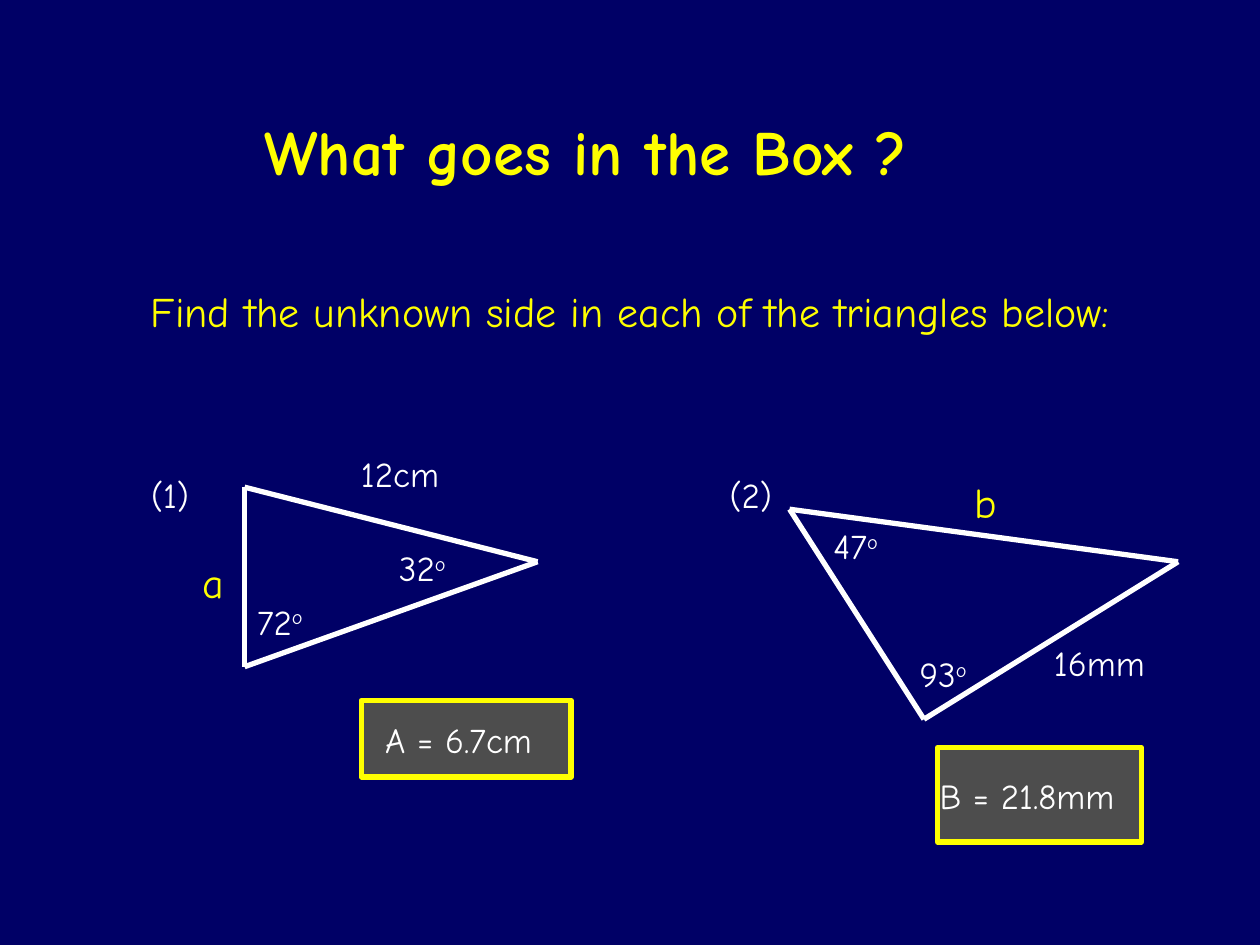
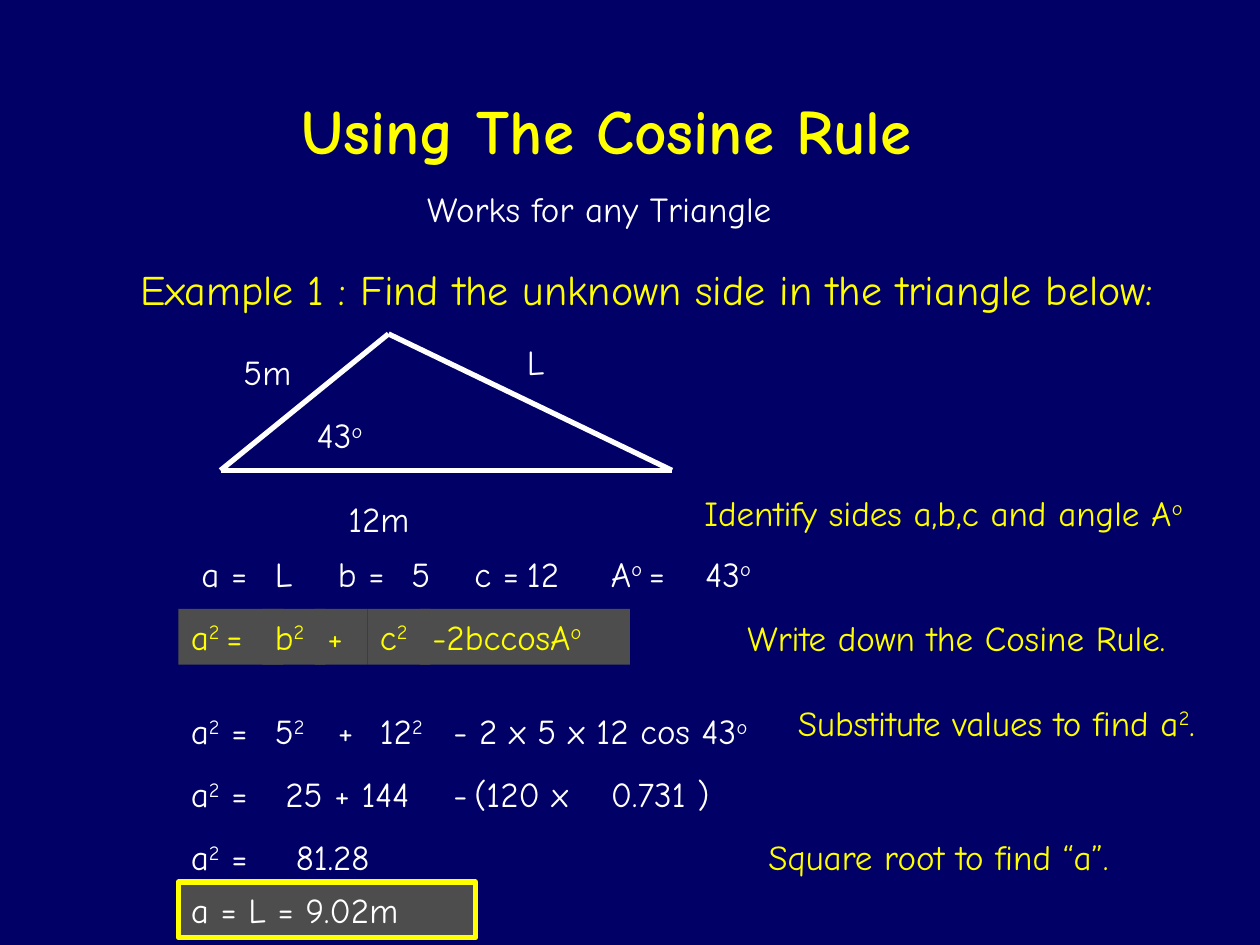
from pptx import Presentation
from pptx.dml.color import RGBColor
from pptx.enum.shapes import MSO_CONNECTOR as Connector, MSO_SHAPE as Preset
from pptx.enum.text import MSO_ANCHOR as Anchor, PP_ALIGN as Align
from pptx.oxml.ns import qn
from pptx.util import Inches, Pt
from lxml import etree

FONT = "Comic Neue"
COLORS = {"navy": "000066", "yellow": "FFFF00", "white": "FFFFFF", "grey": "4D4D4D"}
COLUMNS, ROWS = 120, 90
TITLE_ONLY = 5
LINE_ROWS = 6  # rows taken by one line of text
TILE_ROWS = 5.3  # rows taken by a filled tile
STROKE = Pt(3)

deck = Presentation()
deck.slide_width, deck.slide_height = Inches(10), Inches(7.5)


def color(name):
    return RGBColor.from_string(COLORS[name])


def across(columns):
    return round(deck.slide_width * columns / COLUMNS)


def down(rows):
    return round(deck.slide_height * rows / ROWS)


def place(box):
    left, top, width, height = box
    return across(left), down(top), across(width), down(height)


def write(frame, words, size=20, tint="white", bold=False, anchor=Anchor.TOP):
    """Fill a frame with one paragraph; parts between ^ marks are raised."""
    frame.word_wrap = True
    frame.vertical_anchor = anchor
    line = frame.paragraphs[0]
    line.alignment = Align.LEFT
    for index, part in enumerate(words.split("^")):
        if not part:
            continue
        run = line.add_run()
        run.text = part
        font = run.font
        font.name, font.size, font.bold = FONT, Pt(size), bold
        font.color.rgb = color(tint)
        if index % 2:
            font._element.set("baseline", "30000")


def add_text(slide, words, left, top, width, **style):
    label = slide.shapes.add_textbox(*place((left, top, width, LINE_ROWS)))
    write(label.text_frame, words, **style)


def add_tile(slide, box, words="", outlined=False, **style):
    tile = slide.shapes.add_shape(Preset.RECTANGLE, *place(box))
    tile.shadow.inherit = False
    tile.fill.solid()
    tile.fill.fore_color.rgb = color("grey")
    if outlined:
        tile.line.color.rgb = color("yellow")
        tile.line.width = STROKE
    else:
        tile.line.fill.background()
    if words:
        write(tile.text_frame, words, **style)


def add_side(slide, start, end):
    side = slide.shapes.add_connector(
        Connector.STRAIGHT, across(start[0]), down(start[1]), across(end[0]), down(end[1]))
    side.line.color.rgb = color("white")
    side.line.width = STROKE
    etree.SubElement(side._element.spPr, qn("a:effectLst"))


def start_slide(title, box):
    slide = deck.slides.add_slide(deck.slide_layouts[TITLE_ONLY])
    slide.background.fill.solid()
    slide.background.fill.fore_color.rgb = color("navy")
    heading = slide.shapes.title
    heading.left, heading.top, heading.width, heading.height = place(box)
    write(heading.text_frame, title, size=36, tint="yellow", bold=True, anchor=Anchor.MIDDLE)
    return slide


def draw_triangle(slide, origin, corners, labels, unknown=None):
    """Draw a triangle and its labels, all measured from the origin."""
    x, y = origin
    points = [(x + dx, y + dy) for dx, dy in corners]
    for start, end in zip(points, points[1:] + points[:1]):
        add_side(slide, start, end)
    for words, dx, dy, width in labels:
        add_text(slide, words, x + dx, y + dy, width)
    if unknown:
        letter, dx, dy = unknown
        add_text(slide, letter, x + dx, y + dy, 6, size=24, tint="yellow")


def draw_answer(slide, origin, frame, words, text_at):
    x, y = origin
    left, top, width, height = frame
    add_tile(slide, (x + left, y + top, width, height), outlined=True)
    dx, dy, text_width = text_at
    add_text(slide, words, x + dx, y + dy, text_width)


def draw_equation(slide, left, top, terms, tiled=False):
    """Set the terms of one equation side by side; offsets run from the left."""
    for words, dx, width in terms:
        if tiled:
            add_tile(slide, (left + dx, top, width, TILE_ROWS), words, tint="yellow")
        else:
            add_text(slide, words, left + dx, top, width)


def build_exercises():
    slide = start_slide("What goes in the Box ?", (24, 10.3, 74.8, 8))
    add_text(slide, "Find the unknown side in each of the triangles below:",
             13.2, 26.6, 103.9, size=24, tint="yellow")

    # Exercise 1
    first = (13.2, 42.5)
    draw_triangle(
        slide, first, [(10.1, 3.9), (38, 11), (10.1, 21)],
        [("(1)", 0, 2, 9), ("12cm", 20, 0, 15), ("72^o^", 10.1, 14.1, 8), ("32^o^", 23.6, 9, 9)],
        unknown=("a", 4.9, 9.9))
    draw_answer(slide, first, (21.2, 24.2, 20, 7.3), "A = 6.7cm", (22.3, 25.3, 21))

    # Exercise 2
    second = (68.3, 44.5)
    draw_triangle(
        slide, second, [(6.9, 4), (19.7, 24), (43.9, 9)],
        [("(2)", 0, 0, 8), ("93^o^", 18.1, 17.1, 9), ("47^o^", 9.9, 4.9, 9), ("16mm", 30.9, 16, 14)],
        unknown=("b", 23.3, 0.3))
    draw_answer(slide, second, (21, 26.7, 19.4, 9), "B = 21.8mm", (20, 28.7, 22))


def build_example():
    slide = start_slide("Using The Cosine Rule", (27.5, 9.3, 67.8, 6))
    add_text(slide, "Works for any Triangle", 39.5, 17.3, 39)
    add_text(slide, "Example 1 : Find the unknown side in the triangle below:",
             12.2, 24.5, 107.8, size=24, tint="yellow")
    draw_triangle(
        slide, (21, 31.8), [(0, 13), (16, 0), (43, 13)],
        [("L", 28, 0, 12), ("5m", 1, 1, 10), ("12m", 11, 15, 12), ("43^o^", 8, 7, 9)])

    # Working, one equation per row
    margin = 17
    squared = ("a^2^ =", 0, 9)
    draw_equation(slide, margin, 52, [
        ("a =", 1, 8), ("L", 8, 6), ("b =", 14, 8), ("5", 21, 6),
        ("c =", 27, 8), ("12", 32, 8), ("A^o ^=", 40, 10), ("43^o^", 49, 8)])
    draw_equation(slide, margin, 58, [
        ("a^2 ^=", 0, 10), ("b^2^", 8, 6), ("+", 13, 5), ("c^2^", 18, 6),
        ("-2bccosA^o^", 23, 20)], tiled=True)
    draw_equation(slide, margin, 67, [
        squared, ("5^2^", 8, 6), ("+", 14, 6), ("12^2^", 18, 9),
        ("- 2 x 5 x 12 cos 43^o^", 25, 36)])
    draw_equation(slide, margin, 73, [
        squared, ("25 + 144", 9, 17), ("-", 25, 6), ("(120 x", 27, 13), ("0.731 )", 40, 14)])
    draw_equation(slide, margin, 79, [squared, ("81.28", 10, 14)])
    add_tile(slide, (margin, 84, 28.3, TILE_ROWS), "a = L = 9.02m", outlined=True)

    # Notes beside the working
    notes = [("Identify sides a,b,c and angle A^o^", 65.9, 46.2),
             ("Write down the Cosine Rule.", 70, 58.1),
             ("Substitute values to find a^2^.", 74.8, 66.2),
             ("Square root to find “a”.", 72, 79)]
    for words, left, top in notes:
        add_text(slide, words, left, top, COLUMNS - left, tint="yellow")


def main():
    build_exercises()
    build_example()
    deck.save("out.pptx")


if __name__ == "__main__":
    main()
